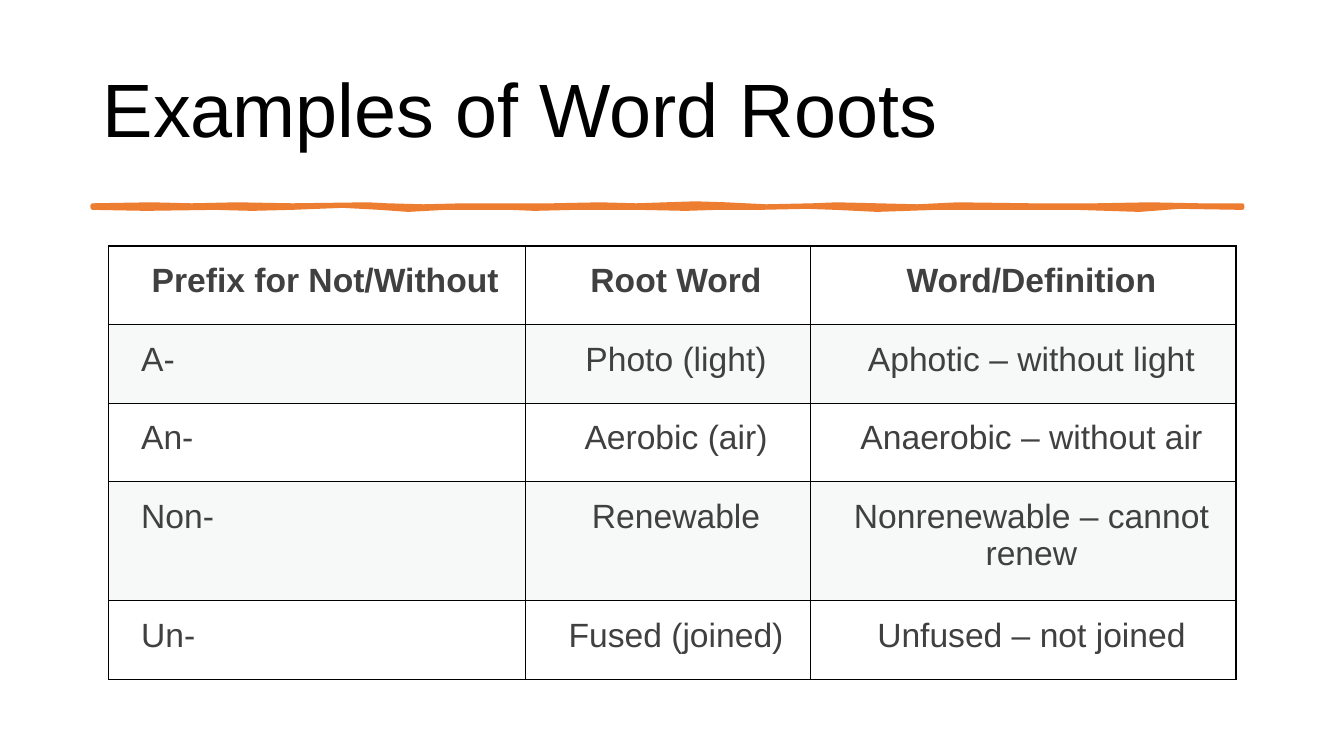
import dataclasses

import lxml.etree
import pptx
import pptx.dml.color
import pptx.enum.text
import pptx.oxml
import pptx.oxml.ns
import pptx.util

Inches = pptx.util.Inches
Alignment = pptx.enum.text.PP_ALIGN
COLORS = {"title": "000000", "text": "404040", "stroke": "ED7D31",
          "band": "D8DEDC", "border": "000000"}
FONT = "Arial"
BAND_OPACITY = 20


@dataclasses.dataclass
class Column:
    width: float
    alignment: Alignment


@dataclasses.dataclass
class Row:
    height: float
    texts: tuple[str, str, str]
    bold: bool = False
    banded: bool = False


COLUMNS = [Column(4.13, Alignment.LEFT), Column(2.83, Alignment.CENTER),
           Column(4.22, Alignment.CENTER)]
ROWS = [
    Row(0.78, ("Prefix for Not/Without", "Root Word", "Word/Definition"), bold=True),
    Row(0.78, ("A-", "Photo (light)", "Aphotic – without light"), banded=True),
    Row(0.78, ("An-", "Aerobic (air)", "Anaerobic – without air")),
    Row(1.18, ("Non-", "Renewable", "Nonrenewable – cannot renew"), banded=True),
    Row(0.78, ("Un-", "Fused (joined)", "Unfused – not joined")),
]

# Edges of the hand-drawn rule, both from left to right
RULE_TOP = [
    (0.92, 2.04), (1.5, 2.03), (1.9, 2.04), (2.35, 2.03), (2.9, 2.04), (3.65, 2.03),
    (3.84, 2.04), (4.2, 2.05), (4.6, 2.04), (5.48, 2.04), (5.95, 2.03), (6.31, 2.04),
    (6.9, 2.02), (7.2, 2.03), (7.6, 2.05), (8.06, 2.04), (8.3, 2.03), (8.7, 2.04),
    (9.1, 2.05), (9.5, 2.03), (10.23, 2.04), (10.87, 2.04), (11.4, 2.03), (11.9, 2.04),
    (12.32, 2.04),
]
RULE_BOTTOM = [
    (0.92, 2.06), (1.45, 2.07), (2.13, 2.06), (2.5, 2.07), (2.89, 2.06), (3.4, 2.04),
    (3.77, 2.06), (4.05, 2.08), (4.41, 2.06), (5.06, 2.06), (5.3, 2.07), (5.7, 2.06),
    (6.35, 2.06), (6.8, 2.07), (7.11, 2.06), (7.53, 2.06), (8.0, 2.05), (8.29, 2.06),
    (8.7, 2.08), (9.28, 2.06), (9.81, 2.06), (10.26, 2.06), (10.68, 2.06),
    (11.3, 2.08), (11.7, 2.05), (12.32, 2.06),
]


def color(name: str) -> pptx.dml.color.RGBColor:
    return pptx.dml.color.RGBColor.from_string(COLORS[name])


def write_text(text_frame, text: str, *, size: float, color_name: str,
               bold: bool = False, alignment: Alignment = Alignment.LEFT,
               line_spacing: float = 1.0) -> None:
    paragraph = text_frame.paragraphs[0]
    paragraph.alignment = alignment
    paragraph.line_spacing = line_spacing
    run = paragraph.add_run()
    run.text = text
    run.font.name = FONT
    run.font.size = pptx.util.Pt(size)
    run.font.bold = bold
    run.font.color.rgb = color(color_name)


def add_title(slide) -> None:
    shape = slide.shapes.add_textbox(Inches(0.92), Inches(0.4), Inches(11.5), Inches(1.45))
    shape.text_frame.word_wrap = True
    shape.text_frame.vertical_anchor = pptx.enum.text.MSO_ANCHOR.MIDDLE
    write_text(shape.text_frame, "Examples of Word Roots", size=54,
               color_name="title", line_spacing=0.9)


def add_rule(slide) -> None:
    outline = [(Inches(x), Inches(y)) for x, y in RULE_TOP + RULE_BOTTOM[::-1]]
    builder = slide.shapes.build_freeform(*outline[0])
    builder.add_line_segments(outline[1:], close=True)
    shape = builder.convert_to_shape()
    shape.shadow.inherit = False
    shape.fill.solid()
    shape.fill.fore_color.rgb = color("stroke")
    shape.line.color.rgb = color("stroke")
    shape.line.width = pptx.util.Pt(3.25)
    line = shape.line.fill._xPr
    lxml.etree.SubElement(line, pptx.oxml.ns.qn("a:round"))


def add_borders(cell) -> None:
    properties = cell._tc.get_or_add_tcPr()
    for position, side in enumerate("LRTB"):
        border = pptx.oxml.parse_xml(
            f'<a:ln{side} {pptx.oxml.ns.nsdecls("a")} w="{pptx.util.Pt(1)}">'
            f'<a:solidFill><a:srgbClr val="{COLORS["border"]}"/></a:solidFill>'
            f'</a:ln{side}>')
        properties.insert(position, border)


def fill_cell(cell, banded: bool) -> None:
    if not banded:
        cell.fill.background()
        return
    cell.fill.solid()
    cell.fill.fore_color.rgb = color("band")
    band = cell._tc.tcPr.find(".//" + pptx.oxml.ns.qn("a:srgbClr"))
    alpha = lxml.etree.SubElement(band, pptx.oxml.ns.qn("a:alpha"))
    alpha.set("val", str(BAND_OPACITY * 1000))


def add_word_table(slide) -> None:
    width = sum(column.width for column in COLUMNS)
    height = sum(row.height for row in ROWS)
    table = slide.shapes.add_table(len(ROWS), len(COLUMNS), Inches(1.08), Inches(2.44),
                                   Inches(width), Inches(height)).table
    table.first_row = False
    table.horz_banding = False
    for index, column in enumerate(COLUMNS):
        table.columns[index].width = Inches(column.width)
    for row_index, row in enumerate(ROWS):
        table.rows[row_index].height = Inches(row.height)
        for column_index, (column, text) in enumerate(zip(COLUMNS, row.texts)):
            cell = table.cell(row_index, column_index)
            cell.margin_left = Inches(0.32)
            cell.margin_right = cell.margin_top = cell.margin_bottom = Inches(0.16)
            fill_cell(cell, row.banded)
            add_borders(cell)
            write_text(cell.text_frame, text, size=24, color_name="text", bold=row.bold,
                       alignment=Alignment.CENTER if row.bold else column.alignment)


def main() -> None:
    presentation = pptx.Presentation()
    presentation.slide_width = Inches(13.33)
    presentation.slide_height = Inches(7.5)
    slide = presentation.slides.add_slide(presentation.slide_layouts[6])
    add_title(slide)
    add_rule(slide)
    add_word_table(slide)
    presentation.save("out.pptx")


if __name__ == "__main__":
    main()
